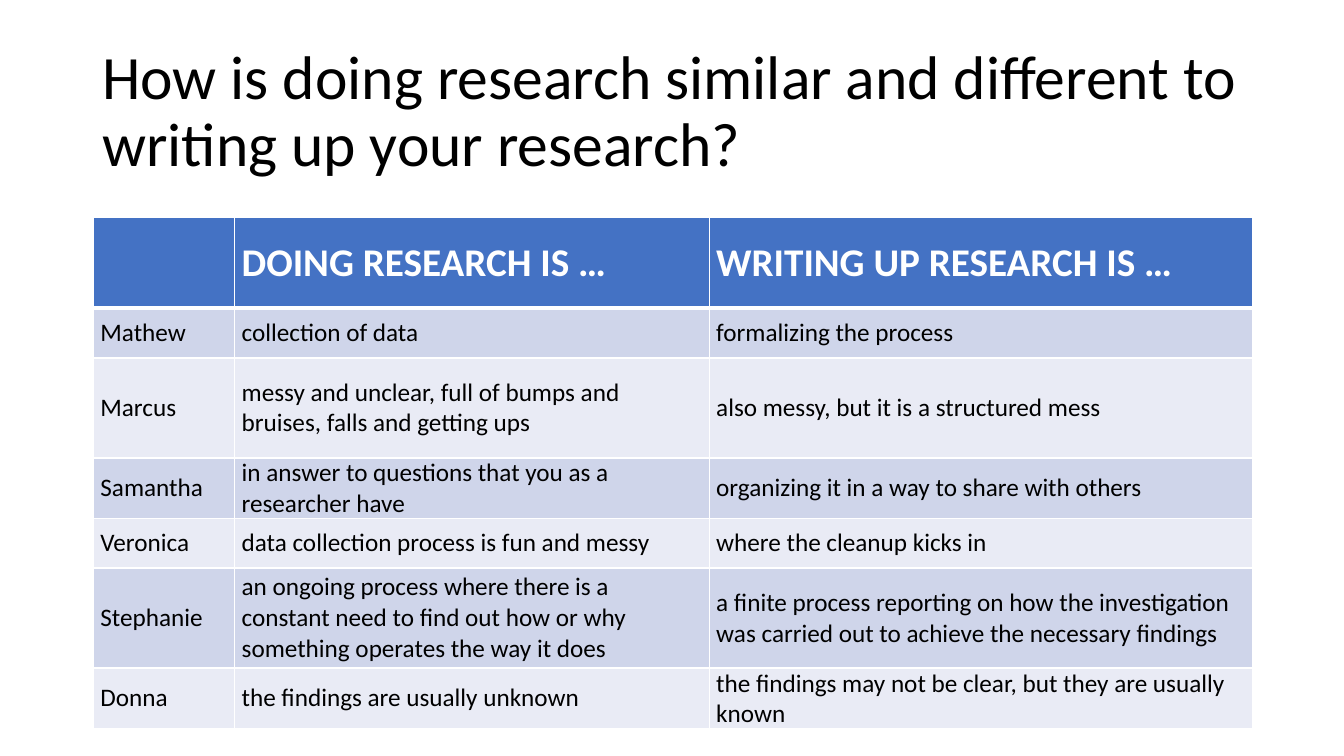
from lxml import etree
from pptx import Presentation
from pptx import util as u
from pptx.dml.color import RGBColor
from pptx.enum import text
from pptx.oxml.ns import qn

COLORS = {
    "black": "000000",
    "white": "FFFFFF",
    "header": "4472C4",
    "odd": "CFD5EA",
    "even": "E9EBF5",
}
FONT = "Calibri"
COLUMN_WIDTHS = (3.56, 11.96, 13.69)
ROW_HEIGHTS = (2.28, 1.25, 2.52, 1.25, 1.25, 2.52, 1.25)
ANSWERS = (
    ("", "DOING RESEARCH IS …", "WRITING UP RESEARCH IS …"),
    ("Mathew", "collection of data", "formalizing the process"),
    ("Marcus", "messy and unclear, full of bumps and bruises, falls and getting ups",
     "also messy, but it is a structured mess"),
    ("Samantha", "in answer to questions that you as a researcher have",
     "organizing it in a way to share with others"),
    ("Veronica", "data collection process is fun and messy", "where the cleanup kicks in"),
    ("Stephanie", "an ongoing process where there is a constant need to find out how or why "
     "something operates the way it does",
     "a finite process reporting on how the investigation was carried out to achieve "
     "the necessary findings"),
    ("Donna", "the findings are usually unknown",
     "the findings may not be clear, but they are usually known"),
)


def write(tf, words, size=18, color="black", bold=False, spacing=None):
    tf.word_wrap = True
    tf.vertical_anchor = text.MSO_ANCHOR.MIDDLE
    p = tf.paragraphs[0]
    if spacing:
        p.line_spacing = spacing
    if words:
        r = p.add_run()
        r.text = words
        r.font.name = FONT
        r.font.size = u.Pt(size)
        r.font.bold = bold
        r.font.color.rgb = RGBColor.from_string(COLORS[color])


def add_borders(cell, top, bottom):
    tcPr = cell._tc.get_or_add_tcPr()
    for side, width in (("L", 1), ("R", 1), ("T", top), ("B", bottom)):
        ln = etree.SubElement(tcPr, qn(f"a:ln{side}"), w=str(u.Pt(width)))
        fill = etree.SubElement(ln, qn("a:solidFill"))
        etree.SubElement(fill, qn("a:srgbClr"), val=COLORS["white"])


def add_title(slide, left, top, width, height):
    sp = slide.shapes.add_textbox(u.Cm(left), u.Cm(top), u.Cm(width), u.Cm(height))
    write(sp.text_frame, "How is doing research similar and different to writing up your research?",
          size=44, spacing=0.9)


def add_answers(slide, left, top, width, height):
    table = slide.shapes.add_table(len(ANSWERS), len(COLUMN_WIDTHS), u.Cm(left), u.Cm(top),
                                   u.Cm(width), u.Cm(height)).table
    for column, share in zip(table.columns, COLUMN_WIDTHS):
        column.width = u.Cm(width * share / sum(COLUMN_WIDTHS))
    for i, (row, share) in enumerate(zip(table.rows, ROW_HEIGHTS)):
        row.height = u.Cm(height * share / sum(ROW_HEIGHTS))
        header = i == 0
        shade = "header" if header else ("even", "odd")[i % 2]
        for cell, words in zip(row.cells, ANSWERS[i]):
            cell.margin_left = cell.margin_right = u.Cm(0.18)
            cell.margin_top = cell.margin_bottom = 0
            cell.vertical_anchor = text.MSO_ANCHOR.MIDDLE
            add_borders(cell, top=3 if i == 1 else 1, bottom=3 if header else 1)
            cell.fill.solid()
            cell.fill.fore_color.rgb = RGBColor.from_string(COLORS[shade])
            write(cell.text_frame, words, size=28 if header else 18,
                  color="white" if header else "black", bold=header)


def main():
    prs = Presentation()
    prs.slide_width, prs.slide_height = u.Cm(33.87), u.Cm(19.05)
    slide = prs.slides.add_slide(prs.slide_layouts[6])
    add_title(slide, 2.33, 1.01, 29.21, 3.68)
    add_answers(slide, 2.35, 5.49, 29.21, sum(ROW_HEIGHTS))
    prs.save("out.pptx")


if __name__ == "__main__":
    main()
